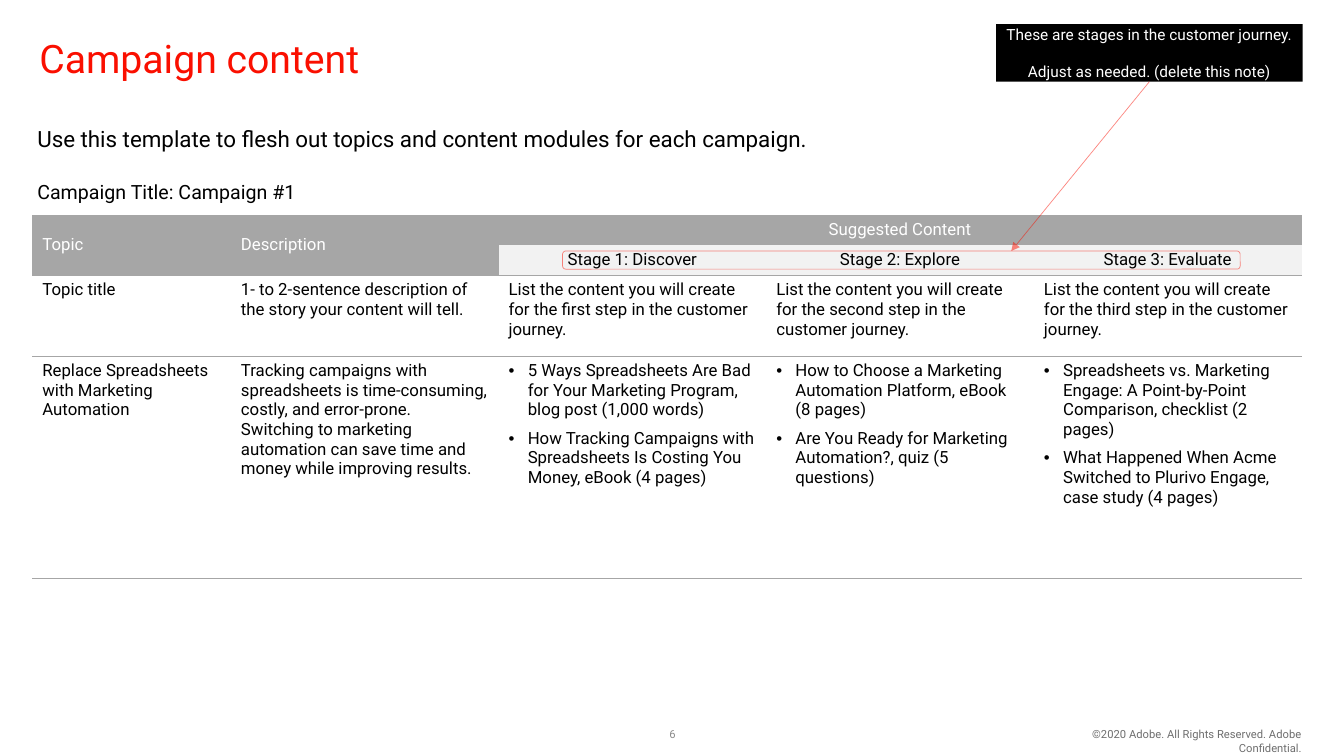
from lxml import etree
from pptx import Presentation
from pptx import util as u
from pptx.dml.color import RGBColor
from pptx.enum import shapes, text
from pptx.oxml import ns

FONT = "Roboto"
RED, GRAY, PALE, BLACK, WHITE = "FA0F00", "A6A6A6", "F2F2F2", "000000", "FFFFFF"
LEFT, CENTER, RIGHT = text.PP_ALIGN.LEFT, text.PP_ALIGN.CENTER, text.PP_ALIGN.RIGHT

TEXTS = [
    ("©2020 Adobe. All Rights Reserved. Adobe Confidential.", (10.17, 7.17, 2.84, 0.3), 8, "6E6E6E", RIGHT, 0.1),
    ("6", (6.45, 7.17, 0.44, 0.29), 8, "8C8C8C", CENTER, 0.1),
    ("Campaign content", (0.34, 0.34, 12.57, 0.71), 28, RED, LEFT, 0.05),
    ("Use this template to flesh out topics and content modules for each campaign.",
     (0.32, 1.19, 12.6, 0.64), 16, BLACK, LEFT, 0.05),
    ("Campaign Title: Campaign #1", (0.32, 1.74, 12.6, 0.38), 14, BLACK, LEFT, 0.05),
]
HEADERS = ["Topic", "Description", "Suggested Content"]
STAGES = ["Stage 1: Discover", "Stage 2: Explore", "Stage 3: Evaluate"]
GUIDE = [
    "Topic title",
    "1- to 2-sentence description of the story your content will tell.",
    "List the content you will create for the first step in the customer journey.",
    "List the content you will create \nfor the second step in the customer journey.",
    "List the content you will create \nfor the third step in the customer journey.",
]
EXAMPLE = [
    "Replace Spreadsheets with Marketing Automation",
    "Tracking campaigns with spreadsheets is time-consuming, costly, and error-prone. "
    "Switching to marketing automation can save time and money while improving results.",
    ["5 Ways Spreadsheets Are Bad \nfor Your Marketing Program, \nblog post (1,000 words)",
     "How Tracking Campaigns with Spreadsheets Is Costing You Money, eBook (4 pages)"],
    ["How to Choose a Marketing Automation Platform, eBook \n(8 pages)",
     "Are You Ready for Marketing Automation?, quiz (5 questions)"],
    ["Spreadsheets vs. Marketing Engage: A Point-by-Point Comparison, checklist (2 pages)",
     "What Happened When Acme Switched to Plurivo Engage, \ncase study (4 pages)"],
]
NOTE = ["These are stages in the customer journey.", "Adjust as needed. (delete this note)"]
COLUMN_WIDTHS = [1.97] + [2.655] * 4
ROW_HEIGHTS = [0.3, 0.3, 0.8, 2.21]
TABLE_LEFT, TABLE_TOP = 0.32, 2.13
NO_GRID_STYLE = "{2D5ABB26-0587-4C30-8999-92F81FD0307C}"


def color(value):
    return RGBColor.from_string(value)


def inches(values):
    return [u.Inches(value) for value in values]


def add_element(parent, tag, **attributes):
    return etree.SubElement(parent, ns.qn(tag), attributes)


def write(frame, lines, size, ink, align=LEFT, bullets=False):
    for index, line in enumerate(lines):
        paragraph = frame.paragraphs[0] if index == 0 else frame.add_paragraph()
        paragraph.text = line
        paragraph.alignment = align
        if bullets:
            properties = paragraph._p.get_or_add_pPr()
            properties.set("marL", str(u.Inches(0.19)))
            properties.set("indent", str(u.Inches(-0.19)))
            add_element(properties, "a:buFont", typeface="Arial")
            add_element(properties, "a:buChar", char="•")
            paragraph.space_after = u.Pt(6)
        for run in paragraph.runs:
            run.font.size = u.Pt(size)
            run.font.name = FONT
            run.font.color.rgb = color(ink)


def set_margins(frame, margin):
    frame.word_wrap = True
    frame.margin_left = frame.margin_right = u.Inches(margin)
    frame.margin_top = frame.margin_bottom = u.Inches(0.05)


def add_bottom_border(cell):
    properties = cell._tc.get_or_add_tcPr()
    border = add_element(properties, "a:lnB", w=str(u.Pt(0.5)))
    add_element(add_element(border, "a:solidFill"), "a:srgbClr", val=GRAY)
    properties.insert(0, border)


def fill_cell(cell, content, ink=BLACK, fill=None, align=LEFT):
    bullets = isinstance(content, list)
    write(cell.text_frame, content if bullets else [content], 12, ink, align, bullets)
    if fill:
        cell.fill.solid()
        cell.fill.fore_color.rgb = color(fill)
        cell.vertical_anchor = text.MSO_ANCHOR.MIDDLE
    else:
        cell.fill.background()


def style_red_line(line):
    line.color.rgb = color(RED)
    line.width = u.Pt(0.5)
    red = line._ln.find(".//" + ns.qn("a:srgbClr"))
    add_element(red, "a:alpha", val="50000")


def add_campaign_table(slide):
    frame = slide.shapes.add_table(
        len(ROW_HEIGHTS), len(COLUMN_WIDTHS),
        *inches((TABLE_LEFT, TABLE_TOP, sum(COLUMN_WIDTHS), sum(ROW_HEIGHTS))))
    table = frame.table
    table.first_row = table.horz_banding = False
    table._tbl.tblPr.find(ns.qn("a:tableStyleId")).text = NO_GRID_STYLE
    for column, width in zip(table.columns, COLUMN_WIDTHS):
        column.width = u.Inches(width)
    for row, height in zip(table.rows, ROW_HEIGHTS):
        row.height = u.Inches(height)
    for index in (0, 1):
        table.cell(0, index).merge(table.cell(1, index))
    table.cell(0, 2).merge(table.cell(0, 4))
    for index, header in enumerate(HEADERS):
        fill_cell(table.cell(0, index), header, WHITE, GRAY, CENTER if index == 2 else LEFT)
    for index, stage in enumerate(STAGES, 2):
        fill_cell(table.cell(1, index), stage, BLACK, PALE, CENTER)
    for row_index, contents in enumerate((GUIDE, EXAMPLE), 2):
        for index, content in enumerate(contents):
            fill_cell(table.cell(row_index, index), content)
    for index in range(len(COLUMN_WIDTHS)):
        for row_index in (1, 2, 3):
            add_bottom_border(table.cell(row_index, index))
    for index in (0, 1):
        add_bottom_border(table.cell(0, index))


def add_stage_note(slide):
    note = slide.shapes.add_shape(shapes.MSO_SHAPE.RECTANGLE, *inches((9.88, 0.24, 3.04, 0.57)))
    note.shadow.inherit = False
    note.fill.solid()
    note.fill.fore_color.rgb = color(BLACK)
    note.line.fill.background()
    set_margins(note.text_frame, 0.05)
    note.text_frame.vertical_anchor = text.MSO_ANCHOR.MIDDLE
    write(note.text_frame, NOTE, 11, WHITE, CENTER)
    note.text_frame.paragraphs[1].space_before = u.Pt(13)

    outline = slide.shapes.add_shape(
        shapes.MSO_SHAPE.ROUNDED_RECTANGLE, *inches((5.58, 2.49, 6.72, 0.18)))
    outline.shadow.inherit = False
    outline.fill.background()
    style_red_line(outline.line)

    arrow = slide.shapes.add_connector(
        shapes.MSO_CONNECTOR.STRAIGHT, *inches((11.4, 0.81, 10.03, 2.49)))
    style_red_line(arrow.line)
    add_element(arrow.line._ln, "a:tailEnd", type="triangle")
    add_element(arrow._element.spPr, "a:effectLst")


def main():
    presentation = Presentation()
    presentation.slide_width, presentation.slide_height = inches((13.33, 7.5))
    slide = presentation.slides.add_slide(presentation.slide_layouts[6])
    for wording, place, size, ink, align, margin in TEXTS:
        box = slide.shapes.add_textbox(*inches(place))
        set_margins(box.text_frame, margin)
        write(box.text_frame, [wording], size, ink, align)
        if size == 28:
            box.text_frame.paragraphs[0].line_spacing = 0.9
    add_campaign_table(slide)
    add_stage_note(slide)
    presentation.save("out.pptx")


if __name__ == "__main__":
    main()
